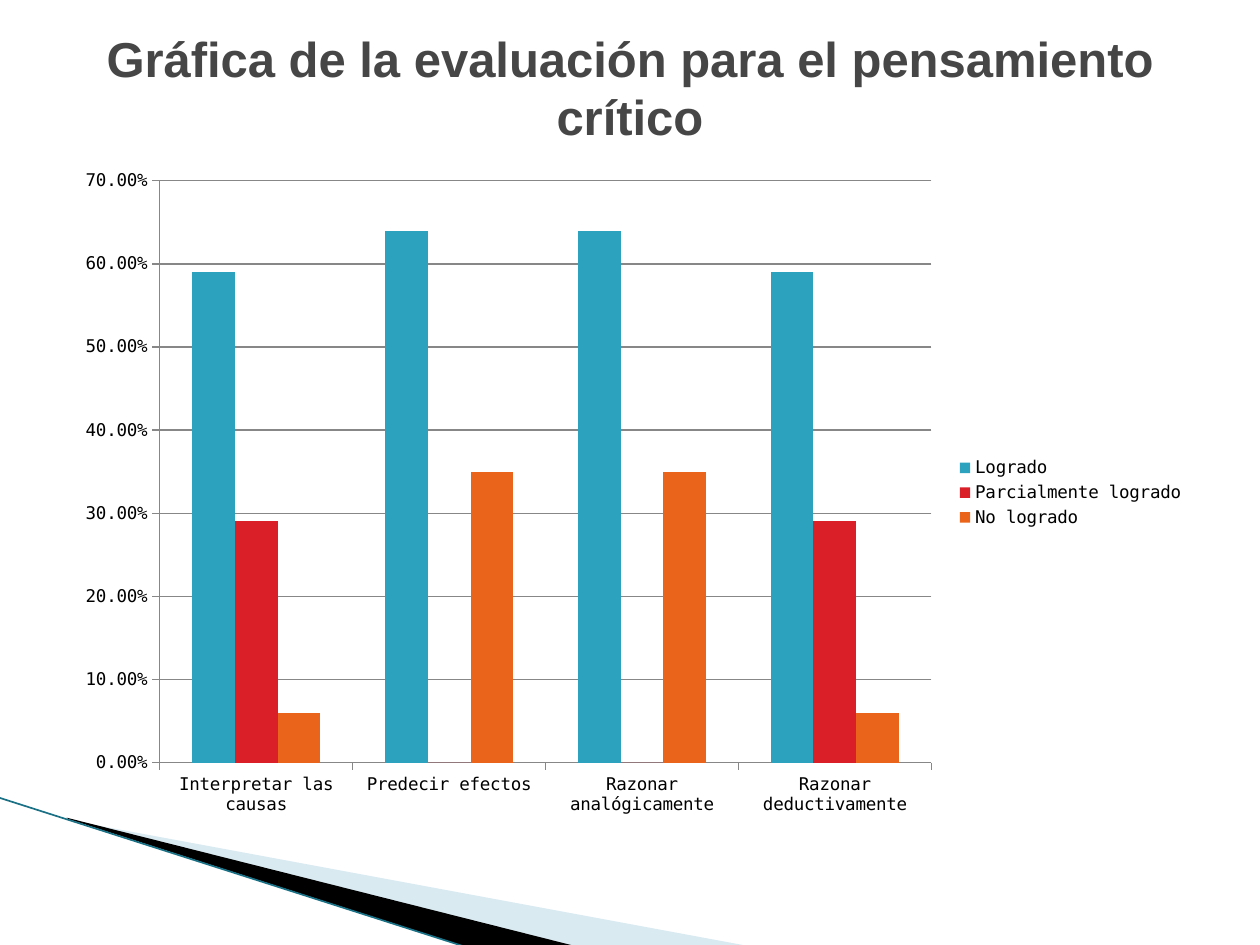
import pptx
import pptx.chart.data
import pptx.dml.color
import pptx.enum.chart
import pptx.enum.shapes
import pptx.enum.text
import pptx.oxml
import pptx.oxml.ns
import pptx.util
from pptx.util import Inches

CATEGORIES = [
    "Interpretar las causas",
    "Predecir efectos",
    "Razonar analógicamente",
    "Razonar deductivamente",
]
SERIES = [
    ("Logrado", "2DA2BF", (0.59, 0.64, 0.64, 0.59)),
    ("Parcialmente logrado", "DA1F28", (0.29, 0, 0, 0.29)),
    ("No logrado", "EB641B", (0.06, 0.35, 0.35, 0.06)),
]
AXIS_COLOR = "878787"


def rgb(color):
    return pptx.dml.color.RGBColor.from_string(color)


def add_child(parent, tag, **attrs):
    child = pptx.oxml.parse_xml(f"<{tag} {pptx.oxml.ns.nsdecls('a')}/>")
    for name, value in attrs.items():
        child.set(name, value)
    parent.append(child)


def format_font(font, size, name, color, bold=False):
    font.size = pptx.util.Pt(size)
    font.name = name
    font.color.rgb = rgb(color)
    font.bold = bold


def add_text(slide, box, text, size=28, name="Arial", color="464646", bold=False):
    sp = slide.shapes.add_textbox(*map(Inches, box))
    tf = sp.text_frame
    tf.word_wrap = True
    tf.vertical_anchor = pptx.enum.text.MSO_ANCHOR.MIDDLE
    p = tf.paragraphs[0]
    p.alignment = pptx.enum.text.PP_ALIGN.CENTER
    r = p.add_run()
    r.text = text
    format_font(r.font, size, name, color, bold)


def add_wedge(slide, left, top, points, color, alpha=None):
    """Filled polygon; points are offsets from (left, top), alpha is a percentage."""
    corners = [(Inches(left + x), Inches(top + y)) for x, y in points]
    builder = slide.shapes.build_freeform(*corners[0])
    builder.add_line_segments(corners[1:], close=True)
    sp = builder.convert_to_shape()
    sp.shadow.inherit = False
    sp.line.fill.background()
    sp.fill.solid()
    sp.fill.fore_color.rgb = rgb(color)
    if alpha is not None:
        fill_color = sp.fill._xPr.find(".//" + pptx.oxml.ns.qn("a:srgbClr"))
        add_child(fill_color, "a:alpha", val=str(alpha * 1000))


def add_corner(slide, left, top):
    """Sweeping wedges and edge line in the lower left corner."""
    add_wedge(slide, left + 0.56, top + 0.17,
              [(0, 0.01), (5.4, 1.01), (4.01, 1.01), (0, 0)], "A0CBDC", alpha=40)
    add_wedge(slide, left + 0.54, top + 0.16,
              [(0, 0), (4.04, 1.02), (3.19, 1.03), (0.01, 0.01)], "000000")
    edge = slide.shapes.add_connector(
        pptx.enum.shapes.MSO_CONNECTOR.STRAIGHT,
        Inches(left), Inches(top), Inches(left + 3.72), Inches(top + 1.19))
    edge.line.color.rgb = rgb("1A7085")
    edge.line.width = pptx.util.Pt(0.95)
    add_child(edge._element.spPr, "a:effectLst")


def add_results_chart(slide, box):
    data = pptx.chart.data.CategoryChartData(number_format="0.00%")
    data.categories = CATEGORIES
    for name, _, values in SERIES:
        data.add_series(name, values)
    chart = slide.shapes.add_chart(
        pptx.enum.chart.XL_CHART_TYPE.COLUMN_CLUSTERED, *map(Inches, box), data).chart
    format_font(chart.font, 10, "DejaVu Sans Mono", "000000")
    chart.has_title = False
    chart.has_legend = True
    chart.legend.position = pptx.enum.chart.XL_LEGEND_POSITION.RIGHT
    chart.legend.include_in_layout = False

    plot = chart.plots[0]
    plot.gap_width = 150
    plot.overlap = 0
    plot.vary_by_categories = False
    for series, (_, color, _) in zip(plot.series, SERIES):
        series.format.fill.solid()
        series.format.fill.fore_color.rgb = rgb(color)

    values = chart.value_axis
    values.minimum_scale, values.maximum_scale, values.major_unit = 0, 0.7, 0.1
    values.has_major_gridlines = True
    values.tick_labels.number_format = "0.00%"
    values.tick_labels.number_format_is_linked = False
    for part in (values, chart.category_axis, values.major_gridlines):
        part.format.line.color.rgb = rgb(AXIS_COLOR)
        part.format.line.width = pptx.util.Pt(0.75)
    for axis in (values, chart.category_axis):
        axis.major_tick_mark = pptx.enum.chart.XL_TICK_MARK.OUTSIDE


def main():
    prs = pptx.Presentation()
    prs.slide_width, prs.slide_height = Inches(10), Inches(7.5)
    slide = prs.slides.add_slide(prs.slide_layouts[6])
    add_corner(slide, -0.01, 6.33)
    add_text(slide, (0.5, 0.18, 9, 1.02),
             "Gráfica de la evaluación para el pensamiento crítico", bold=True)
    add_results_chart(slide, (0.5, 1.25, 9, 5.32))
    prs.save("out.pptx")


if __name__ == "__main__":
    main()
